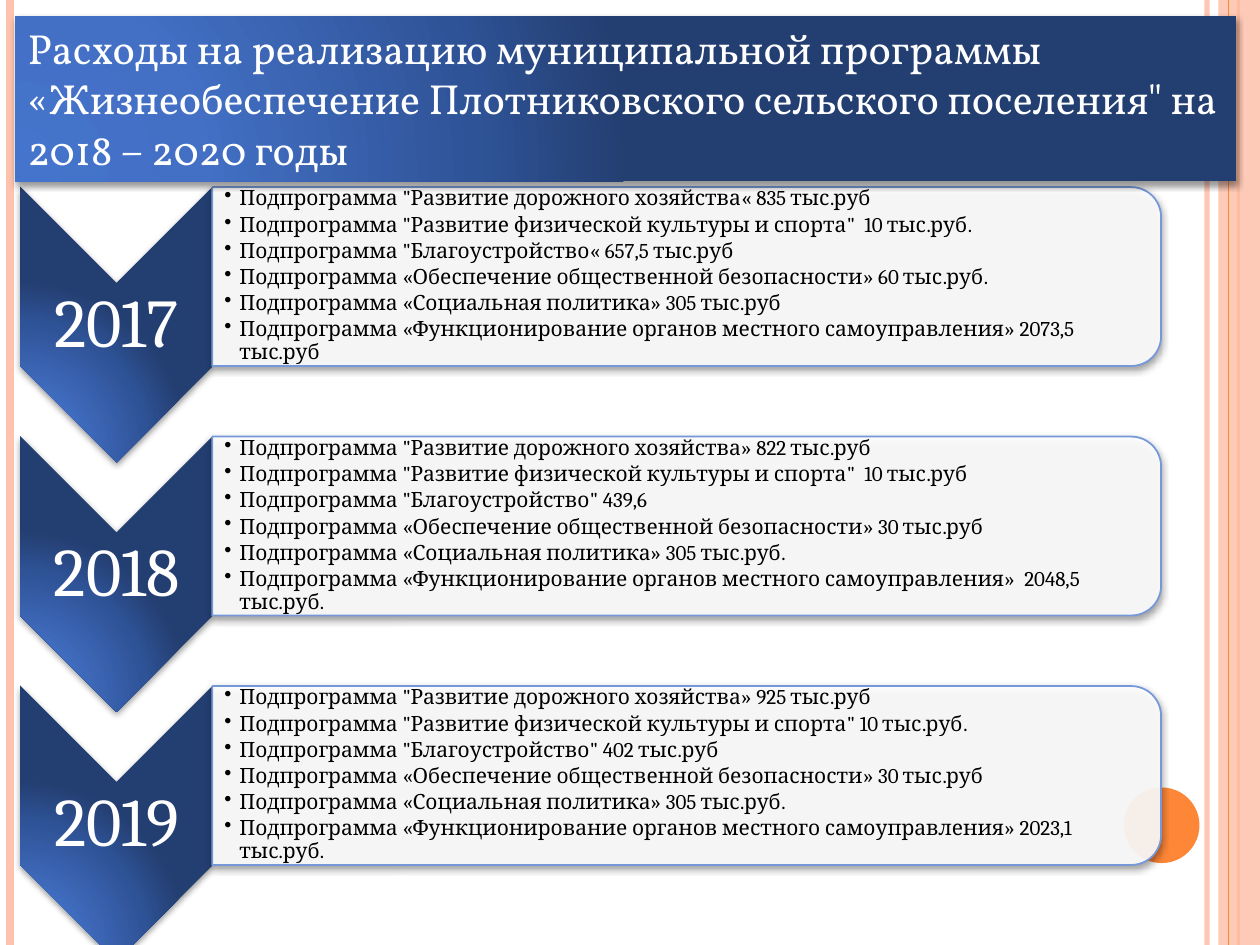
from dataclasses import dataclass

from lxml import etree
from pptx import Presentation
from pptx import util as u
from pptx.dml.color import RGBColor
from pptx.enum import shapes, text
from pptx.oxml import ns

Inches, Pt = u.Inches, u.Pt


@dataclass(frozen=True)
class Theme:
    orange: str = "FE8637"
    peach: str = "FEC3AE"
    white: str = "FFFFFF"
    black: str = "000000"
    panel_border: str = "7598D9"
    gradient: tuple = ((0, "4574CC"), (30, "4370C5"), (75, "2F5397"), (100, "233E70"))
    title_font: str = "Vollkorn"
    body_font: str = "Cambria"
    title_size: int = 24
    year_size: int = 39
    item_size: int = 12


THEME = Theme()

TITLE = ("Расходы на реализацию муниципальной программы "
         "«Жизнеобеспечение Плотниковского сельского поселения\" на 2018 – 2020 годы")

ROADS = "Подпрограмма \"Развитие дорожного хозяйства"
SPORT = "Подпрограмма \"Развитие физической культуры и спорта\""
GREENING = "Подпрограмма \"Благоустройство"
SAFETY = "Подпрограмма «Обеспечение общественной безопасности»"
SOCIAL = "Подпрограмма\u00a0«Социальная политика»"
GOVERNMENT = "Подпрограмма\u00a0«Функционирование органов местного самоуправления»"
PROGRAMS = (ROADS, SPORT, GREENING, SAFETY, SOCIAL, GOVERNMENT)

EXPENSES = {
    "2017": ("« 835 тыс.руб", "  10 тыс.руб.", "« 657,5 тыс.руб",
             " 60 тыс.руб.", " 305 тыс.руб", " 2073,5 тыс.руб"),
    "2018": ("» 822 тыс.руб", "  10 тыс.руб", "\" 439,6",
             " 30 тыс.руб", " 305 тыс.руб.", "  2048,5 тыс.руб."),
    "2019": ("» 925 тыс.руб", " 10 тыс.руб.", "\" 402 тыс.руб",
             " 30 тыс.руб", " 305 тыс.руб.", " 2023,1 тыс.руб."),
}
FIRST_TOP = 1.48
YEAR_STEP = 1.98


def rgb(color):
    return RGBColor.from_string(color)


def add_child(parent, tag, **attributes):
    child = etree.SubElement(parent, ns.qn(tag))
    for key, value in attributes.items():
        child.set(key, str(value))
    return child


def set_alpha(owner, percent):
    for color in owner.iter(ns.qn("a:srgbClr")):
        add_child(color, "a:alpha", val=percent * 1000)


def add_outline(slide, preset, left, top, width, height):
    outline = slide.shapes.add_shape(
        preset, Inches(left), Inches(top), Inches(width), Inches(height))
    outline.shadow.inherit = False
    outline.line.fill.background()
    return outline


def fill_solid(outline, color, opacity=100):
    outline.fill.solid()
    outline.fill.fore_color.rgb = rgb(color)
    if opacity < 100:
        set_alpha(outline.fill._xPr.find(ns.qn("a:solidFill")), opacity)


def fill_gradient(outline):
    outline.fill.background()
    properties = outline._element.spPr
    gradient = etree.Element(ns.qn("a:gradFill"), rotWithShape="1")
    stops = add_child(gradient, "a:gsLst")
    for position, color in THEME.gradient:
        stop = add_child(stops, "a:gs", pos=position * 1000)
        add_child(stop, "a:srgbClr", val=color)
    circle = add_child(gradient, "a:path", path="circle")
    add_child(circle, "a:fillToRect", l=5000, t=100000, r=120000, b=10000)
    properties.replace(properties.find(ns.qn("a:noFill")), gradient)


def cast_shadow(outline):
    effects = outline._element.spPr.find(ns.qn("a:effectLst"))
    shadow = add_child(effects, "a:outerShdw", blurRad=Pt(4), dist=Pt(1.6),
                       dir=5400000, rotWithShape=0)
    add_child(shadow, "a:srgbClr", val=THEME.black)
    set_alpha(shadow, 42)


def add_vertical(slide, x, color, weight, opacity=100):
    stripe = slide.shapes.add_connector(
        shapes.MSO_CONNECTOR.STRAIGHT, Inches(x), 0, Inches(x), Inches(7.5))
    stripe.line.color.rgb = rgb(color)
    stripe.line.width = Pt(weight)
    properties = stripe._element.spPr
    if opacity < 100:
        set_alpha(properties, opacity)
    add_child(properties, "a:effectLst")


def style_paragraph(paragraph, size, color, font):
    paragraph.font.size = Pt(size)
    paragraph.font.color.rgb = rgb(color)
    paragraph.font.name = font


def add_text(slide, left, top, width, height, insets):
    box = slide.shapes.add_textbox(
        Inches(left), Inches(top), Inches(width), Inches(height))
    frame = box.text_frame
    frame.word_wrap = True
    frame.vertical_anchor = text.MSO_ANCHOR.MIDDLE
    frame.margin_left, frame.margin_top, frame.margin_right, frame.margin_bottom = (
        Inches(inset) for inset in insets)
    return frame


def add_bullet(paragraph):
    properties = paragraph._p.get_or_add_pPr()
    properties.set("marL", str(Inches(0.12)))
    properties.set("indent", str(Inches(-0.12)))
    add_child(properties, "a:buChar", char="•")


def add_backdrop(slide):
    add_vertical(slide, 9.58, THEME.peach, 3, 93)
    add_vertical(slide, 0.08, THEME.peach, 4.5)
    add_vertical(slide, 9.83, THEME.orange, 1.5)
    band = add_outline(slide, shapes.MSO_SHAPE.RECTANGLE, 9.67, 0, 0.33, 7.5)
    fill_solid(band, THEME.peach, 87)
    add_vertical(slide, 9.75, THEME.orange, 0.75)
    dot = add_outline(slide, shapes.MSO_SHAPE.OVAL, 8.92, 6.25, 0.6, 0.6)
    fill_solid(dot, THEME.orange)


def add_year(slide, top, year, amounts):
    chevron = add_outline(slide, shapes.MSO_SHAPE.CHEVRON, -0.17, top + 0.33, 2.19, 1.53)
    chevron.rotation = 90
    fill_gradient(chevron)
    cast_shadow(chevron)

    label = add_text(slide, 0.16, top + 0.77, 1.53, 0.66, [0.03] * 4).paragraphs[0]
    label.text = year
    label.alignment = text.PP_ALIGN.CENTER
    label.line_spacing = 0.9
    style_paragraph(label, THEME.year_size, THEME.white, THEME.body_font)

    panel = add_outline(slide, shapes.MSO_SHAPE.ROUND_2_SAME_RECTANGLE,
                        4.74, top - 3.05, 1.42, 7.53)
    panel.rotation = 90
    fill_solid(panel, THEME.white, 90)
    panel.line.color.rgb = rgb(THEME.panel_border)
    panel.line.width = Pt(1)
    cast_shadow(panel)

    items = add_text(slide, 1.69, top + 0.07, 7.46, 1.28, (0.09, 0.01, 0.01, 0.01))
    items.text = "\n".join(
        program + amount for program, amount in zip(PROGRAMS, amounts))
    for item in items.paragraphs:
        add_bullet(item)
        item.line_spacing = 0.9
        item.space_after = Pt(2)
        style_paragraph(item, THEME.item_size, THEME.black, THEME.body_font)


def add_title(slide):
    banner = add_outline(slide, shapes.MSO_SHAPE.RECTANGLE, 0.12, 0.13, 9.69, 1.31)
    fill_gradient(banner)
    cast_shadow(banner)
    frame = banner.text_frame
    frame.word_wrap = True
    frame.auto_size = text.MSO_AUTO_SIZE.SHAPE_TO_FIT_TEXT
    frame.vertical_anchor = text.MSO_ANCHOR.TOP
    heading = frame.paragraphs[0]
    heading.text = TITLE
    heading.alignment = text.PP_ALIGN.LEFT
    style_paragraph(heading, THEME.title_size, THEME.white, THEME.title_font)


def main():
    deck = Presentation()
    deck.slide_width, deck.slide_height = Inches(10), Inches(7.5)
    slide = deck.slides.add_slide(deck.slide_layouts[6])
    add_backdrop(slide)
    for row, (year, amounts) in enumerate(EXPENSES.items()):
        add_year(slide, FIRST_TOP + row * YEAR_STEP, year, amounts)
    add_title(slide)
    deck.save("out.pptx")


if __name__ == "__main__":
    main()
